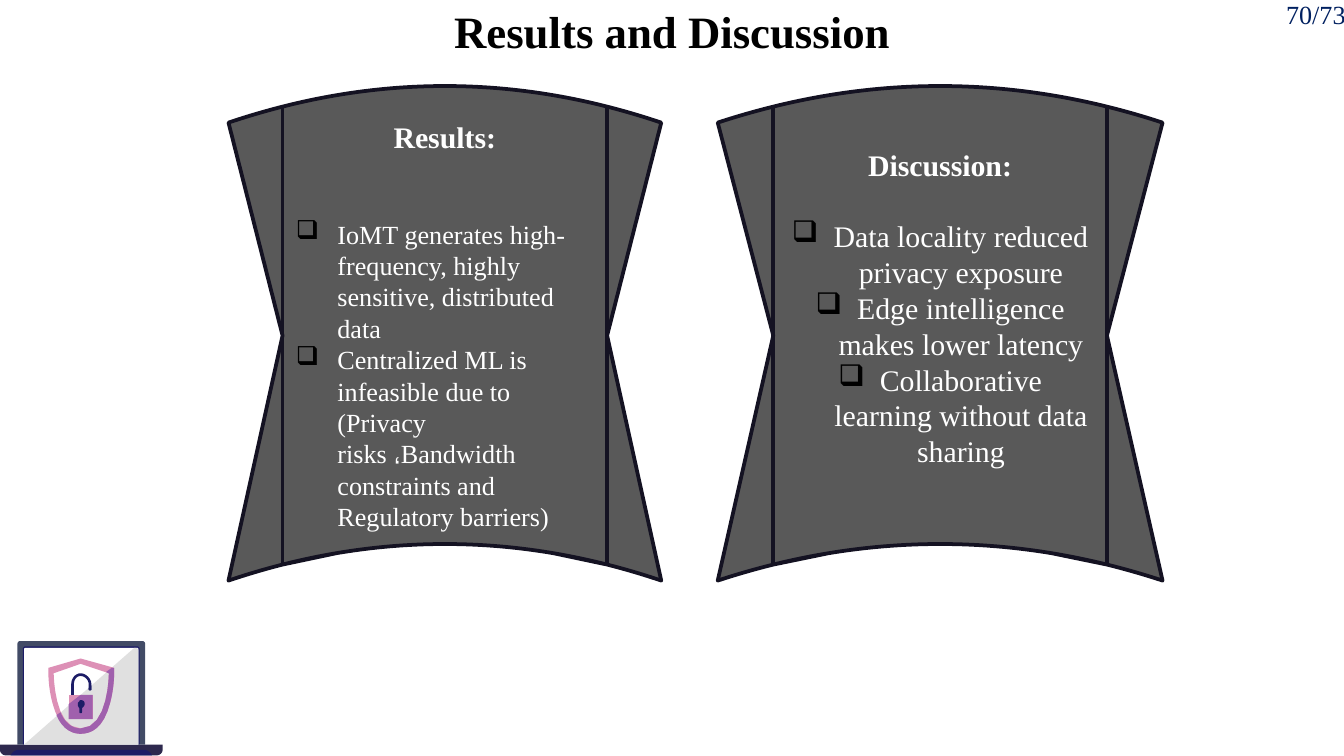
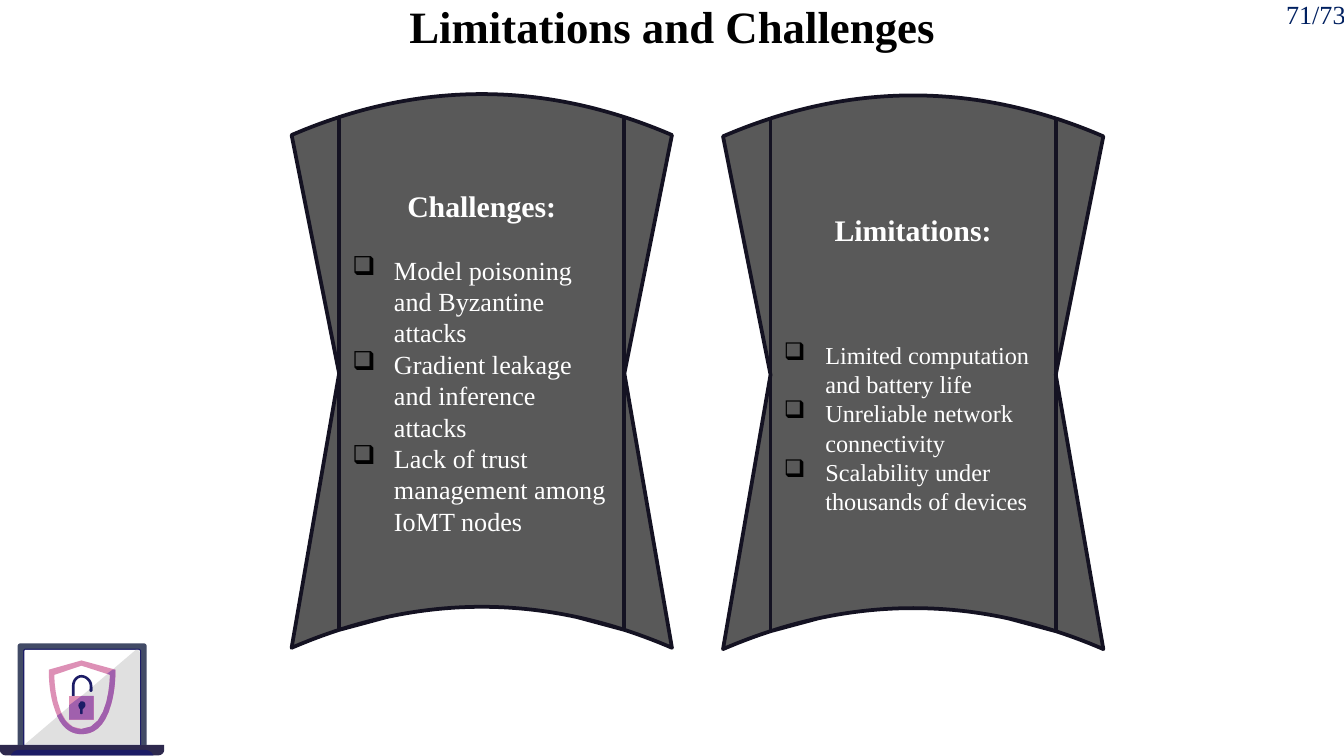
from pptx import Presentation
from pptx.dml.color import RGBColor
from pptx.enum.shapes import MSO_SHAPE
from pptx.enum.text import MSO_ANCHOR, MSO_AUTO_SIZE, PP_ALIGN
from pptx.util import Inches, Pt
from lxml.etree import SubElement
from pptx.oxml.ns import qn

FONT = "Times New Roman"
BLACK = RGBColor(0x00, 0x00, 0x00)
WHITE = RGBColor(0xFF, 0xFF, 0xFF)
BLUE = RGBColor(0x00, 0x20, 0x60)
GREY = RGBColor(0x59, 0x59, 0x59)
EDGE = RGBColor(0x14, 0x12, 0x22)
NAVY = RGBColor(0x1C, 0x1C, 0x66)
PLUM = RGBColor(0x2E, 0x29, 0x4E)
SLATE = RGBColor(0x42, 0x4B, 0x66)
PALE = RGBColor(0xE0, 0xE0, 0xE0)
PINK = RGBColor(0xDD, 0x90, 0xB6)
MAUVE = RGBColor(0xA0, 0x60, 0xAD)

FOOT = 5.62
DESK = 5.54


def tab(left, top, right, curve):
    return [(left + curve, top),
            (left + curve / 2, top, left, top + curve / 2, left, top + curve),
            (left, DESK), (right, DESK), (right, top + curve),
            (right, top + curve / 2, right - curve / 2, top, right - curve, top)]


def box(left, top, right, base):
    return [(left, top), (left, base), (right, base), (right, top)]


HOLE = [(0.6, 4.94), (0.81, 5.01), (0.81, 5.01, 0.81, 5.42, 0.6, 5.42),
        (0.4, 5.42, 0.4, 5.01, 0.4, 5.01)]
SHIELD = [(0.6, 4.9), (0.36, 4.97), (0.36, 5.01),
          (0.36, 5.01, 0.36, 5.12, 0.39, 5.23),
          (0.44, 5.42, 0.53, 5.46, 0.6, 5.46),
          (0.68, 5.46, 0.77, 5.42, 0.82, 5.23),
          (0.85, 5.12, 0.85, 5.01, 0.85, 5.01), (0.85, 4.97)]
SHADE = [(0.83, 4.97), (0.79, 5), (0.81, 5.01),
         (0.81, 5.01, 0.81, 5.42, 0.6, 5.42),
         (0.53, 5.42, 0.48, 5.37, 0.45, 5.3), (0.42, 5.32),
         (0.47, 5.44, 0.55, 5.46, 0.6, 5.46),
         (0.68, 5.46, 0.77, 5.42, 0.82, 5.23),
         (0.85, 5.12, 0.85, 5.01, 0.85, 5.01), (0.85, 4.97)]
SHACKLE = [(0.6, 5.01), (0.56, 5.01, 0.53, 5.05, 0.53, 5.09), (0.53, 5.21),
           (0.53, 5.22, 0.55, 5.22, 0.55, 5.21), (0.55, 5.09),
           (0.55, 5.06, 0.57, 5.03, 0.6, 5.03),
           (0.63, 5.03, 0.66, 5.06, 0.66, 5.09), (0.66, 5.13),
           (0.66, 5.14, 0.68, 5.14, 0.68, 5.13), (0.68, 5.09),
           (0.68, 5.05, 0.64, 5.01, 0.6, 5.01)]
TIP = [(0.68, 5.1), (0.66, 5.12), (0.66, 5.13),
       (0.66, 5.14, 0.68, 5.14, 0.68, 5.13)]
KEYHOLE = [(0.6, 5.21), (0.6, 5.21, 0.59, 5.21, 0.59, 5.22),
           (0.57, 5.23, 0.58, 5.26, 0.59, 5.27), (0.59, 5.3),
           (0.59, 5.31, 0.61, 5.31, 0.61, 5.3), (0.61, 5.27),
           (0.62, 5.26, 0.63, 5.25, 0.63, 5.24),
           (0.63, 5.22, 0.62, 5.21, 0.6, 5.21)]
BASE = [(0, DESK), (0, 5.58), (0, 5.6, 0.02, FOOT, 0.04, FOOT), (1.17, FOOT),
        (1.19, FOOT, 1.21, 5.6, 1.21, 5.58), (1.21, DESK)]
KEYS = [(0.14, 5.58), (0.11, 5.58, 0.09, 5.6, 0.08, FOOT), (1.13, FOOT),
        (1.12, 5.6, 1.1, 5.58, 1.07, 5.58)]
GLARE = [(1, 4.82), (0.18, DESK), (1.03, DESK), (1.03, 4.84),
         (1.03, 4.83, 1.02, 4.82, 1.01, 4.82)]
LAPTOP = [
    (PLUM, BASE), (NAVY, KEYS),
    (SLATE, tab(0.13, 4.77, 1.08, 0.02)),
    (NAVY, tab(0.17, 4.81, 1.04, 0.02)),
    (WHITE, tab(0.18, 4.82, 1.03, 0.01)),
    (PALE, GLARE), (PINK, HOLE, SHIELD), (MAUVE, SHADE),
    (NAVY, SHACKLE), (NAVY, TIP),
    (PINK, box(0.51, 5.17, 0.69, 5.35)),
    (MAUVE, [(0.6, 5.17), (0.51, 5.24), (0.51, 5.35), (0.69, 5.35), (0.69, 5.17)]),
    (NAVY, KEYHOLE),
]


def trace(steps, wide, tall):
    dots = []
    for step in steps:
        if len(step) == 2:
            dots.append(step)
            continue
        knots = [dots[-1], step[:2], step[2:4], step[4:]]
        for k in range(1, 9):
            t = k / 8
            mix = ((1 - t) ** 3, 3 * t * (1 - t) ** 2, 3 * t * t * (1 - t), t ** 3)
            dots.append(tuple(sum(m * q[a] for m, q in zip(mix, knots)) for a in (0, 1)))
    return [(Inches(x * wide), Inches(FOOT - (FOOT - y) * tall)) for x, y in dots]


def add_laptop(slide, wide, tall):
    group = slide.shapes.add_group_shape()
    for color, *loops in LAPTOP:
        first, *rest = [trace(loop, wide, tall) for loop in loops]
        pen = group.shapes.build_freeform(*first[0], scale=1.0)
        pen.add_line_segments(first[1:], close=True)
        for loop in rest:
            pen.move_to(*loop[0])
            pen.add_line_segments(loop[1:], close=True)
        part = pen.convert_to_shape()
        part.shadow.inherit = False
        part.fill.solid()
        part.fill.fore_color.rgb = color
        part.line.fill.background()


def set_font(para, size, color, bold=False):
    para.font.name = FONT
    para.font.size = Pt(size)
    para.font.color.rgb = color
    para.font.bold = bold


def add_title(slide, text, top):
    label = slide.shapes.add_textbox(Inches(0.5), Inches(top), Inches(9), Inches(0.63))
    frame = label.text_frame
    frame.word_wrap = True
    frame.vertical_anchor = MSO_ANCHOR.TOP
    frame.margin_top = frame.margin_bottom = Inches(0.1)
    para = frame.paragraphs[0]
    para.text = text
    para.alignment = PP_ALIGN.CENTER
    set_font(para, 24, BLACK, True)


def add_page(slide, text):
    label = slide.shapes.add_textbox(Inches(9.47), Inches(-0.06), Inches(0.71), Inches(0.34))
    frame = label.text_frame
    frame.word_wrap = True
    frame.auto_size = MSO_AUTO_SIZE.SHAPE_TO_FIT_TEXT
    frame.paragraphs[0].text = text
    set_font(frame.paragraphs[0], 14, BLUE)


def add_bullet(para):
    props = para._p.get_or_add_pPr()
    props.set("marL", str(Inches(0.31)))
    props.set("indent", str(-Inches(0.31)))
    tint = SubElement(props, qn("a:buClr"))
    SubElement(tint, qn("a:srgbClr")).set("val", str(BLACK))
    face = SubElement(props, qn("a:buFont"))
    face.set("typeface", "Wingdings")
    face.set("charset", "2")
    SubElement(props, qn("a:buChar")).set("char", "q")


def add_ribbon(slide, place, head, gap, items, size, align=PP_ALIGN.LEFT, base=0.05):
    ribbon = slide.shapes.add_shape(MSO_SHAPE.CURVED_UP_RIBBON, *map(Inches, place))
    for k, value in enumerate((0.074, 1, 0.125)):
        ribbon.adjustments[k] = value
    ribbon.shadow.inherit = False
    ribbon.fill.solid()
    ribbon.fill.fore_color.rgb = GREY
    ribbon.line.color.rgb = EDGE
    ribbon.line.width = Pt(2)
    frame = ribbon.text_frame
    frame.word_wrap = True
    frame.vertical_anchor = MSO_ANCHOR.MIDDLE
    frame.margin_bottom = Inches(base)
    para = frame.paragraphs[0]
    para.text = head
    para.alignment = PP_ALIGN.CENTER
    para.space_after = Pt(gap)
    set_font(para, 16, WHITE, True)
    for item in items:
        para = frame.add_paragraph()
        para.text = item
        para.alignment = align
        add_bullet(para)
        set_font(para, size, WHITE)


def add_slide(deck, title, top, page, wide=1, tall=1):
    slide = deck.slides.add_slide(deck.slide_layouts[6])
    add_title(slide, title, top)
    add_laptop(slide, wide, tall)
    add_page(slide, page)
    return slide


def main():
    deck = Presentation()
    deck.slide_width = Inches(10)
    deck.slide_height = deck.slide_width * 9 // 16

    slide = add_slide(deck, "Results and Discussion", -0.07, "70/73")
    add_ribbon(slide, (1.7, 0.64, 3.22, 3.68), "Results:", 34, [
        "IoMT generates high-frequency, highly sensitive, distributed data",
        "Centralized ML is infeasible due to (Privacy risks ،Bandwidth "
        "constraints and Regulatory barriers)",
    ], 14)
    add_ribbon(slide, (5.34, 0.64, 3.31, 3.68), "Discussion:", 19, [
        "Data locality reduced privacy exposure",
        "Edge intelligence makes lower latency",
        "Collaborative learning without data sharing",
    ], 16, PP_ALIGN.CENTER, 0.31)

    slide = add_slide(deck, "Limitations and Challenges", -0.11, "71/73", 1.01, 0.98)
    add_ribbon(slide, (2.17, 0.7, 2.83, 4.12), "Challenges:", 16.5, [
        "Model poisoning and Byzantine attacks",
        "Gradient leakage and inference attacks",
        "Lack of trust management among IoMT nodes",
    ], 14)
    add_ribbon(slide, (5.38, 0.71, 2.83, 4.12), "Limitations:", 50, [
        "Limited computation and battery life",
        "Unreliable network connectivity",
        "Scalability under thousands of devices",
    ], 13)
    deck.save("out.pptx")


if __name__ == "__main__":
    main()
